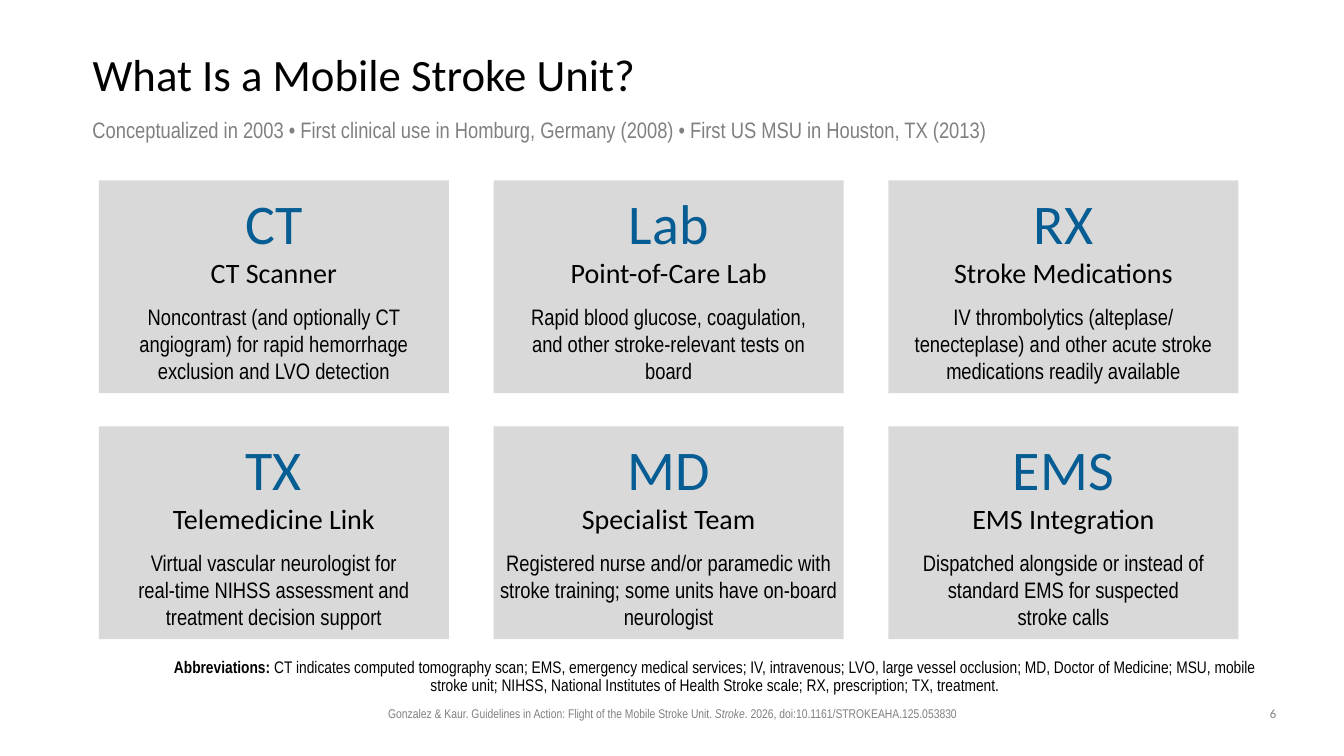
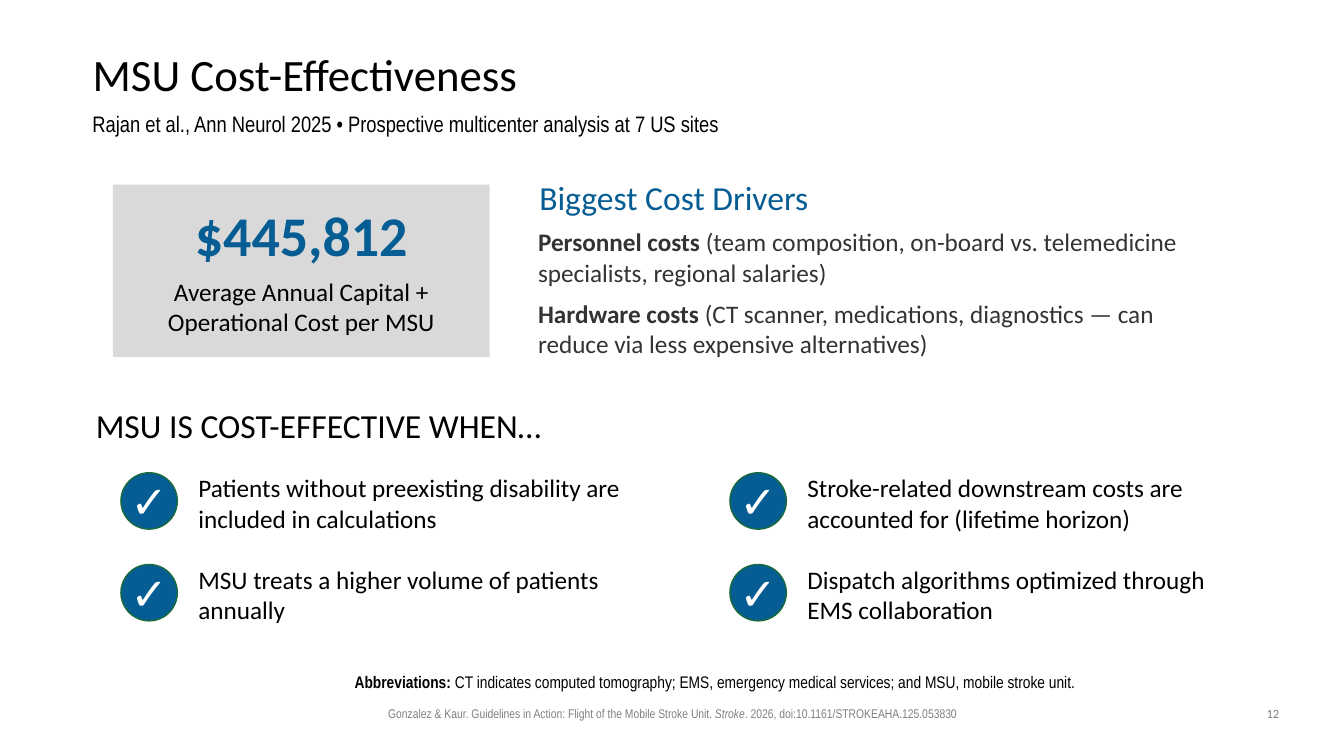
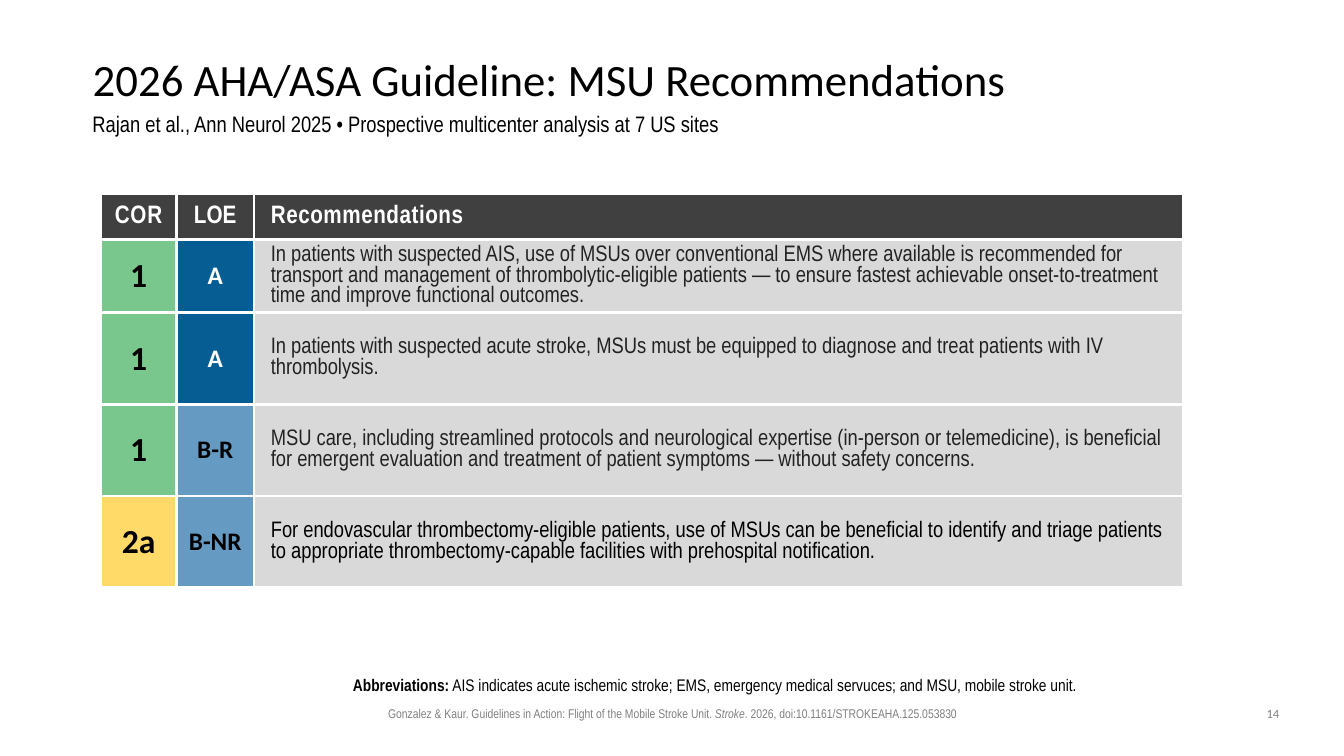
import dataclasses
import itertools

import lxml.etree
import pptx
import pptx.dml.color
import pptx.enum.shapes
import pptx.enum.text
import pptx.oxml.ns
import pptx.util

Pt = pptx.util.Pt
ALIGN = pptx.enum.text.PP_ALIGN
ANCHOR = pptx.enum.text.MSO_ANCHOR
SHAPE = pptx.enum.shapes.MSO_SHAPE
qualified = pptx.oxml.ns.qn


@dataclasses.dataclass(frozen=True)
class Theme:
    heading_font: str = "Calibri"
    body_font: str = "Arial Narrow"
    black: str = "000000"
    white: str = "FFFFFF"
    ink: str = "222222"
    charcoal: str = "333333"
    header: str = "404040"
    gray: str = "808080"
    panel: str = "D9D9D9"
    blue: str = "065D93"
    light_blue: str = "659BC2"
    green: str = "79C78D"
    yellow: str = "FFDA68"
    outline: str = "1A6B3C"
    title: int = 32
    display: int = 40
    heading: int = 24
    card_title: int = 20
    text: int = 18
    small: int = 16
    note: int = 12
    footer: int = 9


THEME = Theme()


@dataclasses.dataclass
class Line:
    runs: tuple
    size: int
    color: str = THEME.black
    font: str = THEME.heading_font
    bold: bool = False
    align: ALIGN = ALIGN.LEFT
    after: float = 0
    spacing: object = None
    tracking: int = 0


def rgb(value):
    return pptx.dml.color.RGBColor.from_string(value)


class Deck:
    def __init__(self):
        self.presentation = pptx.Presentation()
        self.presentation.slide_width = Pt(960)
        self.presentation.slide_height = Pt(540)
        self.layout = self.presentation.slide_layouts[5]
        self.slide = None

    def start(self, title, number, title_top=28.8):
        self.slide = self.presentation.slides.add_slide(self.layout)
        shape = self.slide.shapes.title
        shape.left, shape.top = Pt(66.2), Pt(title_top)
        shape.width, shape.height = Pt(828), Pt(51.8)
        self.fill_frame(shape.text_frame, [Line((title,), THEME.title, spacing=0.9)],
                        ANCHOR.MIDDLE, (0, 0, 0, 0))
        self.text(894.2, 500.4, 30.2, 18.7,
                  [Line((number,), THEME.footer, THEME.gray, align=ALIGN.CENTER)], grow=False)

    def share_citation(self, runs):
        shape = self.text(170, 500.4, 620.6, 18, [
            Line(runs, THEME.footer, THEME.gray, THEME.body_font, align=ALIGN.CENTER)])
        self.layout.shapes._spTree.append(shape._element)

    def fill_frame(self, frame, lines, anchor=ANCHOR.TOP, margins=(7.2, 3.6, 7.2, 3.6)):
        frame.word_wrap = True
        frame.vertical_anchor = anchor
        (frame.margin_left, frame.margin_top,
         frame.margin_right, frame.margin_bottom) = map(Pt, margins)
        for index, line in enumerate(lines):
            paragraph = frame.add_paragraph() if index else frame.paragraphs[0]
            self.set_line(paragraph, line)

    def set_line(self, paragraph, line):
        paragraph.alignment = line.align
        paragraph.space_before = Pt(0)
        paragraph.space_after = Pt(line.after)
        if line.spacing:
            paragraph.line_spacing = line.spacing
        paragraph.font.size = Pt(line.size)
        paragraph.font.name = line.font
        paragraph.font.bold = line.bold
        paragraph.font.color.rgb = rgb(line.color)
        for piece in line.runs:
            content, emphasis = (piece, "") if isinstance(piece, str) else piece
            for index, part in enumerate(content.split("\n")):
                if index:
                    paragraph.add_line_break()
                run = paragraph.add_run()
                run.text = part
                if emphasis == "bold":
                    run.font.bold = True
                if emphasis == "italic":
                    run.font.italic = True
                if line.tracking:
                    run._r.get_or_add_rPr().set("spc", str(line.tracking))

    def text(self, left, top, width, height, lines, anchor=ANCHOR.TOP,
             margins=(7.2, 3.6, 7.2, 3.6), grow=True):
        shape = self.slide.shapes.add_textbox(Pt(left), Pt(top), Pt(width), Pt(height))
        self.fill_frame(shape.text_frame, lines, anchor, margins)
        if grow:
            shape.text_frame.auto_size = pptx.enum.text.MSO_AUTO_SIZE.SHAPE_TO_FIT_TEXT
        return shape

    def subtitle(self, content, top, color=THEME.black):
        self.text(59, top, 813.6, 26.6,
                  [Line((content,), THEME.small, color, THEME.body_font)])

    def heading(self, content, left, top, color):
        self.text(left, top, 428.4, 36, [Line((content,), THEME.heading, color)],
                  margins=(0, 3.6, 7.2, 3.6))

    def abbreviations(self, content, top=467.3):
        line = Line((("Abbreviations:", "bold"), content), THEME.note, font=THEME.body_font,
                    align=ALIGN.CENTER, spacing=0.9)
        self.text(120.2, top, 788.4, 33.1, [line], ANCHOR.BOTTOM, (0, 3.6, 7.2, 3.6), False)

    def panel(self, kind, left, top, width, height, color, lines, anchor, margins, outline=None):
        shape = self.slide.shapes.add_shape(kind, Pt(left), Pt(top), Pt(width), Pt(height))
        shape.shadow.inherit = False
        shape.fill.solid()
        shape.fill.fore_color.rgb = rgb(color)
        if outline:
            shape.line.color.rgb = rgb(outline)
            shape.line.width = Pt(1)
        else:
            shape.line.fill.background()
        self.fill_frame(shape.text_frame, lines, anchor, margins)

    def card(self, left, top, width, height, lines, side, head):
        self.panel(SHAPE.RECTANGLE, left, top, width, height, THEME.panel, lines,
                   ANCHOR.TOP, (side, head, side, 0))

    def check_item(self, left, top, content):
        mark = Line(("✓",), THEME.title, THEME.white, bold=True, align=ALIGN.CENTER)
        self.panel(SHAPE.OVAL, left, top, 40.3, 40.3, THEME.blue, [mark],
                   ANCHOR.MIDDLE, (0, 0, 0, 0), THEME.outline)
        self.text(left + 48.2, top - 3.6, 325, 51, [Line((content,), THEME.text)])

    def table(self, left, top, widths, heights, rows):
        frame = self.slide.shapes.add_table(len(rows), len(widths), Pt(left), Pt(top),
                                            Pt(sum(widths)), Pt(sum(heights)))
        table = frame.table
        table.first_row = False
        table.horz_banding = False
        for column, width in zip(table.columns, widths):
            column.width = Pt(width)
        for row, height in zip(table.rows, heights):
            row.height = Pt(height)
        for row, entries in zip(table.rows, rows):
            for cell, (line, color) in zip(row.cells, entries):
                self.cell(cell, line, color)

    def cell(self, cell, line, color):
        cell.vertical_anchor = ANCHOR.MIDDLE
        cell.margin_left = Pt(12 if line.align == ALIGN.LEFT else 3.6)
        cell.margin_top = cell.margin_right = cell.margin_bottom = Pt(3.6)
        self.set_line(cell.text_frame.paragraphs[0], line)
        properties = cell._tc.get_or_add_tcPr()
        for side in ("a:lnL", "a:lnR", "a:lnT", "a:lnB"):
            border = lxml.etree.SubElement(properties, qualified(side), w=str(Pt(2.25)))
            fill = lxml.etree.SubElement(border, qualified("a:solidFill"))
            lxml.etree.SubElement(fill, qualified("a:srgbClr"), val=THEME.white)
        cell.fill.solid()
        cell.fill.fore_color.rgb = rgb(color)


def unit_slide(deck):
    deck.start("What Is a Mobile Stroke Unit?", "6")
    deck.share_citation((
        "Gonzalez & Kaur. Guidelines in Action: Flight of the Mobile Stroke Unit. ",
        ("Stroke", "italic"), ". 2026, doi:10.1161/STROKEAHA.125.053830"))
    deck.subtitle("Conceptualized in 2003 • First clinical use in Homburg, Germany (2008) • "
                  "First US MSU in Houston, TX (2013)", 79.2, THEME.gray)
    wide, narrow = 4, 24
    cards = [
        ("CT", "CT Scanner", "Noncontrast (and optionally CT angiogram) for rapid hemorrhage "
         "exclusion and LVO detection", wide),
        ("Lab", "Point-of-Care Lab", "Rapid blood glucose, coagulation, and other "
         "stroke-relevant tests on board", narrow),
        ("RX", "Stroke Medications", "IV thrombolytics (alteplase/\ntenecteplase) and other "
         "acute stroke medications readily available", wide),
        ("TX", "Telemedicine Link", "Virtual vascular neurologist for\nreal-time NIHSS "
         "assessment and treatment decision support", wide),
        ("MD", "Specialist Team", "Registered nurse and/or paramedic with stroke training; "
         "some units have on-board neurologist", wide),
        ("EMS", "EMS Integration", "Dispatched alongside or instead of standard EMS for "
         "suspected stroke calls", narrow),
    ]
    for index, (code, name, description, side) in enumerate(cards):
        row, column = divmod(index, 3)
        deck.card(70.6 + 282 * column, 128.9 + 175.7 * row, 250, 152, [
            Line((code,), THEME.display, THEME.blue, align=ALIGN.CENTER),
            Line((name,), THEME.card_title, align=ALIGN.CENTER, after=10),
            Line((description,), THEME.small, font=THEME.body_font, align=ALIGN.CENTER),
        ], side, 5.5)
    deck.abbreviations(
        " CT indicates computed tomography scan; EMS, emergency medical services; IV, "
        "intravenous; LVO, large vessel occlusion; MD, Doctor of Medicine; MSU, mobile stroke "
        "unit; NIHSS, National Institutes of Health Stroke scale; RX, prescription; TX, "
        "treatment.")


STUDY = "Rajan et al., Ann Neurol 2025 • Prospective multicenter analysis at 7 US sites"


def cost_slide(deck):
    deck.start("MSU Cost-Effectiveness", "12")
    deck.subtitle(STUDY, 75)
    deck.card(80.6, 131.8, 269.3, 123.1, [
        Line(("$445,812",), THEME.display, THEME.blue, bold=True, align=ALIGN.CENTER, after=6),
        Line(("Average Annual Capital + Operational Cost per MSU",), THEME.text,
             align=ALIGN.CENTER),
    ], 18, 11.5)
    deck.heading("Biggest Cost Drivers", 385.2, 123.1, THEME.blue)
    drivers = [
        ("Personnel costs ", "(team composition, on-board vs. telemedicine specialists, "
         "regional salaries)"),
        ("Hardware costs ", "(CT scanner, medications, diagnostics — can reduce via less "
         "expensive alternatives)"),
    ]
    deck.text(377.3, 158.4, 491.8, 104.4, [
        Line(((lead, "bold"), detail), THEME.text, THEME.charcoal, after=8)
        for lead, detail in drivers])
    deck.heading("MSU IS COST-EFFECTIVE WHEN…", 68.4, 285.8, THEME.black)
    conditions = [
        "Patients without preexisting disability are included in calculations",
        "Stroke-related downstream costs are accounted for (lifetime horizon)",
        "MSU treats a higher volume of patients annually",
        "Dispatch algorithms optimized through EMS collaboration",
    ]
    for (row, column), condition in zip(itertools.product(range(2), repeat=2), conditions):
        deck.check_item(86.4 + 435 * column, 337.7 + 65.5 * row, condition)
    deck.abbreviations(" CT indicates computed tomography; EMS, emergency medical services; "
                       "and MSU, mobile stroke unit.", 465.1)


def guideline_slide(deck):
    deck.start("2026 AHA/ASA Guideline: MSU Recommendations", "14", 32.4)
    deck.subtitle(STUDY, 75)
    header = [("COR", ALIGN.CENTER, 50), ("LOE", ALIGN.CENTER, 0),
              ("Recommendations", ALIGN.LEFT, 40)]
    rows = [[(Line((label,), THEME.text, THEME.white, THEME.body_font, True, align,
                   tracking=tracking), THEME.header)
             for label, align, tracking in header]]
    class_fills = {"1": THEME.green, "2a": THEME.yellow}
    level_styles = {"A": (THEME.white, THEME.blue), "B-R": (THEME.black, THEME.light_blue),
                    "B-NR": (THEME.black, THEME.light_blue)}
    recommendations = [
        ("1", "A", THEME.ink,
         "In patients with suspected AIS, use of MSUs over conventional EMS where available is "
         "recommended for transport and management of thrombolytic-eligible patients — to "
         "ensure fastest achievable onset-to-treatment time and improve functional outcomes."),
        ("1", "A", THEME.ink,
         "In patients with suspected acute stroke, MSUs must be equipped to diagnose and treat "
         "patients with IV thrombolysis."),
        ("1", "B-R", THEME.ink,
         "MSU care, including streamlined protocols and neurological expertise (in-person or "
         "telemedicine), is beneficial for emergent evaluation and treatment of patient "
         "symptoms — without safety concerns."),
        ("2a", "B-NR", THEME.black,
         "For endovascular thrombectomy-eligible patients, use of MSUs can be beneficial to "
         "identify and triage patients to appropriate thrombectomy-capable facilities with "
         "prehospital notification."),
    ]
    for strength, level, color, content in recommendations:
        level_color, level_fill = level_styles[level]
        rows.append([
            (Line((strength,), THEME.heading, bold=True, align=ALIGN.CENTER),
             class_fills[strength]),
            (Line((level,), THEME.text, level_color, bold=True, align=ALIGN.CENTER), level_fill),
            (Line((content,), THEME.small, color, THEME.body_font, spacing=Pt(15)),
             THEME.panel),
        ])
    deck.table(72, 138.2, (54, 55.5, 664), (33, 49, 65.5, 65.5, 65.5), rows)
    deck.abbreviations(" AIS indicates acute ischemic stroke; EMS, emergency medical servuces; "
                       "and MSU, mobile stroke unit.")


def main():
    deck = Deck()
    unit_slide(deck)
    cost_slide(deck)
    guideline_slide(deck)
    deck.presentation.save("out.pptx")


if __name__ == "__main__":
    main()
